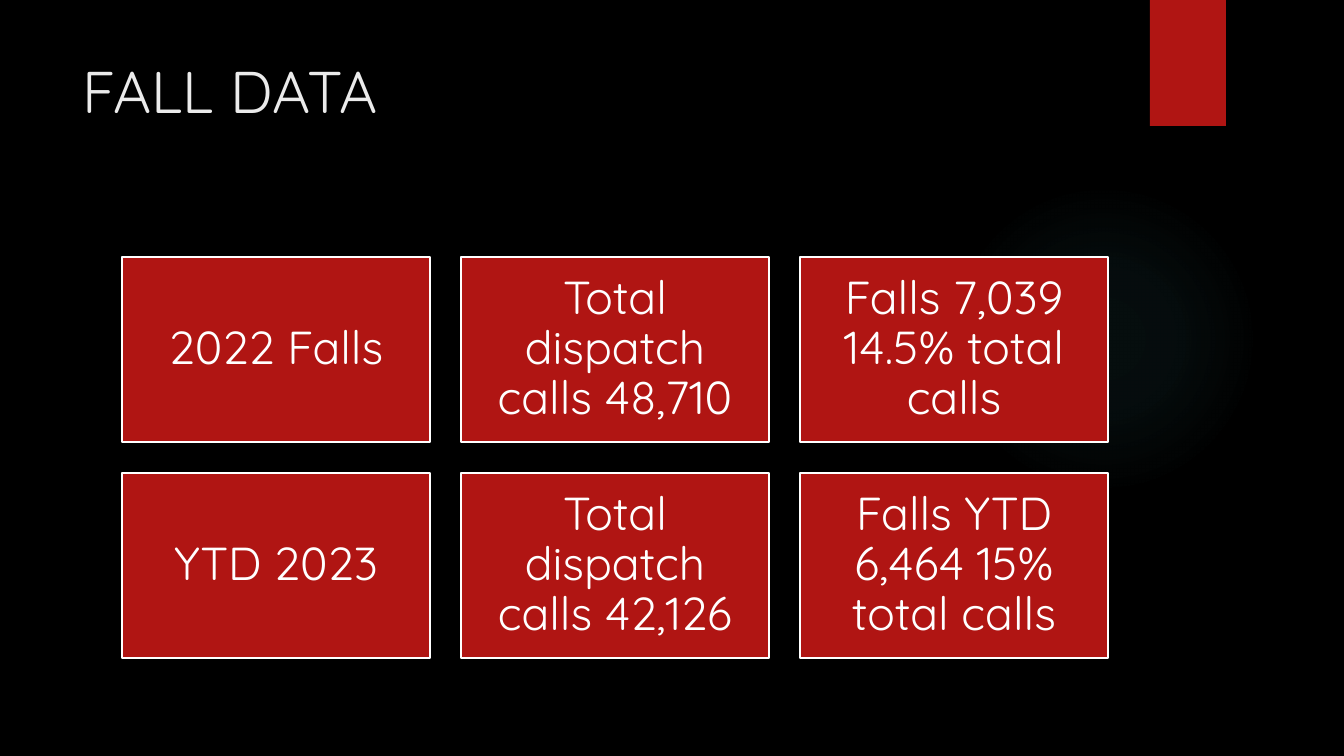
from pptx import Presentation, oxml, util as u
from pptx.dml.color import RGBColor
from pptx.enum import shapes, text
from pptx.oxml import ns

# Content
TITLE = "FALL DATA"
ROWS = [
    ("2022 Falls", "Total dispatch calls 48,710", "Falls 7,039 14.5% total calls"),
    ("YTD 2023", "Total dispatch calls 42,126", "Falls YTD 6,464 15% total calls"),
]

# Style
FONT = "Quicksand"
BLACK, RED, WHITE, PALE, TEAL = "000000", "B01513", "FFFFFF", "EBEBEB", "50B9C1"
GLOW_STOPS = [(0, 7), (36, 6), (69, 0)]  # position %, opacity %

# Card grid, in px
GRID_LEFT, GRID_TOP = 122, 257
CARD_WIDTH, CARD_HEIGHT = 308, 185
GAP_X, GAP_Y = 31, 31
CARD_INSET = 14


def px(length):
    return u.Emu(round(length * 914400 / 100.8))


def color(value):
    return RGBColor.from_string(value)


def add_block(page, kind, left, top, width, height, fill=None):
    block = page.shapes.add_shape(kind, px(left), px(top), px(width), px(height))
    block.shadow.inherit = False
    block.line.fill.background()
    if fill:
        block.fill.solid()
        block.fill.fore_color.rgb = color(fill)
    return block


def style_text(para, size, ink):
    para.font.name = FONT
    para.font.size = u.Pt(size)
    para.font.color.rgb = color(ink)


def add_glow(page):
    glow = add_block(page, shapes.MSO_SHAPE.OVAL, 949, 184, 310, 310)
    glow.fill.background()
    stops = "".join(
        f'<a:gs pos="{place * 1000}"><a:srgbClr val="{TEAL}">'
        f'<a:alpha val="{opacity * 1000}"/></a:srgbClr></a:gs>'
        for place, opacity in GLOW_STOPS
    )
    gradient = oxml.parse_xml(
        f'<a:gradFill {ns.nsdecls("a")}><a:gsLst>{stops}</a:gsLst>'
        '<a:path path="circle"><a:fillToRect l="50000" t="50000" r="50000" b="50000"/>'
        "</a:path></a:gradFill>"
    )
    properties = glow.element.spPr
    properties.replace(properties.find(ns.qn("a:noFill")), gradient)


def add_card(page, left, top, words):
    card = add_block(page, shapes.MSO_SHAPE.RECTANGLE, left, top, CARD_WIDTH, CARD_HEIGHT, RED)
    card.line.color.rgb = color(WHITE)
    card.line.width = u.Pt(1.5)
    frame = card.text_frame
    frame.word_wrap = True
    frame.vertical_anchor = text.MSO_ANCHOR.MIDDLE
    frame.margin_left = frame.margin_right = px(CARD_INSET)
    frame.margin_top = frame.margin_bottom = px(CARD_INSET)
    para = frame.paragraphs[0]
    para.text = words
    para.alignment = text.PP_ALIGN.CENTER
    para.line_spacing = 0.9
    style_text(para, 33, WHITE)


def main():
    deck = Presentation()
    deck.slide_width, deck.slide_height = px(1344), px(756)
    page = deck.slides.add_slide(deck.slide_layouts[5])
    page.background.fill.solid()
    page.background.fill.fore_color.rgb = color(BLACK)

    # Backdrop glow and corner ribbon
    add_glow(page)
    add_block(page, shapes.MSO_SHAPE.RECTANGLE, 1150, 0, 76, 126, RED)

    # Title
    title = page.shapes.title
    title.left, title.top, title.width, title.height = px(72), px(50), px(1036), px(154)
    title.text_frame.text = TITLE
    title.text_frame.vertical_anchor = text.MSO_ANCHOR.TOP
    para = title.text_frame.paragraphs[0]
    para.alignment = text.PP_ALIGN.LEFT
    style_text(para, 42, PALE)

    # Cards
    for row, cards in enumerate(ROWS):
        for column, words in enumerate(cards):
            left = GRID_LEFT + column * (CARD_WIDTH + GAP_X)
            top = GRID_TOP + row * (CARD_HEIGHT + GAP_Y)
            add_card(page, left, top, words)

    deck.save("out.pptx")


if __name__ == "__main__":
    main()
